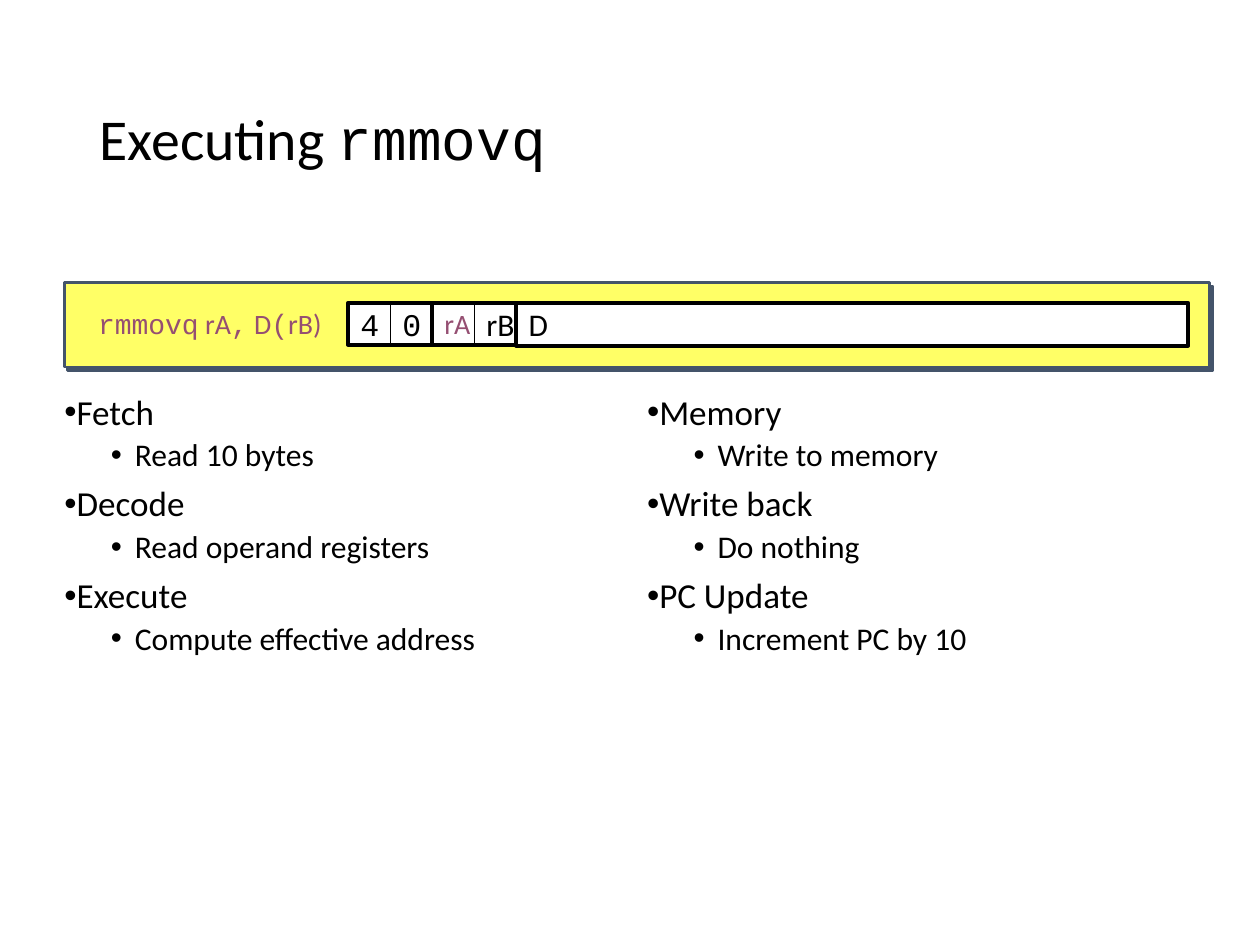
from lxml import etree
from pptx import Presentation
from pptx import util as u
from pptx.dml.color import RGBColor
from pptx.enum import shapes, text
from pptx.oxml import ns

COLORS = {"ink": "000000", "paper": "FFFFFF", "banner": "FFFF66",
          "slate": "44546A", "plum": "954F72"}
SANS, MONO = "Calibri", "Courier New"
CELL = 0.333
ROW_LEFT, ROW_TOP = 2.76, 2.4

STAGES_LEFT = [("Fetch", "Read 10 bytes"),
               ("Decode", "Read operand registers"),
               ("Execute", "Compute effective address")]
STAGES_RIGHT = [("Memory", "Write to memory"),
                ("Write back", "Do nothing"),
                ("PC Update", "Increment PC by 10")]


def rgb(name):
    return RGBColor.from_string(COLORS[name])


def inches(*lengths):
    return [u.Inches(length) for length in lengths]


def add_text(paragraph, wording, size=18, font=SANS, color="ink"):
    run = paragraph.add_run()
    run.text = wording
    run.font.size = u.Pt(size)
    run.font.name = font
    run.font.color.rgb = rgb(color)


def place(placeholder, *box):
    placeholder.left, placeholder.top, placeholder.width, placeholder.height = inches(*box)
    placeholder.text_frame.auto_size = text.MSO_AUTO_SIZE.NONE
    return placeholder.text_frame


def add_title(title):
    frame = place(title, 0.69, 0.4, 8.61, 1.45)
    frame.vertical_anchor = text.MSO_ANCHOR.MIDDLE
    heading = frame.paragraphs[0]
    heading.alignment = text.PP_ALIGN.LEFT
    heading.line_spacing = 0.9
    add_text(heading, "Executing ", size=33)
    add_text(heading, "rmmovq", size=33, font=MONO)


def add_bullet(item, wording, level):
    item.level = level
    item.line_spacing = 0.9
    item.space_before = u.Pt(3.8 if level else 7.5)
    margin, indent = inches(0.56, -0.19) if level else inches(0, 0)
    properties = item._p.get_or_add_pPr()
    properties.set("marL", str(margin))
    properties.set("indent", str(indent))
    etree.SubElement(properties, ns.qn("a:buFont"), typeface="Arial")
    etree.SubElement(properties, ns.qn("a:buChar"), char="•")
    add_text(item, wording, size=18 if level else 20)


def add_stages(body, left, stages):
    frame = place(body, left, 3.08, 4.45, 5.03)
    frame.vertical_anchor = text.MSO_ANCHOR.TOP
    lines = [(wording, level) for stage in stages for level, wording in enumerate(stage)]
    for number, (wording, level) in enumerate(lines):
        item = frame.add_paragraph() if number else frame.paragraphs[0]
        add_bullet(item, wording, level)


def add_box(group, box, fill=None, line="ink", weight=2.25):
    rectangle = group.shapes.add_shape(shapes.MSO_SHAPE.RECTANGLE, *inches(*box))
    rectangle.shadow.inherit = False
    if fill:
        rectangle.fill.solid()
        rectangle.fill.fore_color.rgb = rgb(fill)
    else:
        rectangle.fill.background()
    rectangle.line.color.rgb = rgb(line)
    rectangle.line.width = u.Pt(weight)
    return rectangle


def start_line(holder):
    frame = holder.text_frame
    frame.word_wrap = False
    frame.vertical_anchor = text.MSO_ANCHOR.MIDDLE
    frame.paragraphs[0].alignment = text.PP_ALIGN.LEFT
    return frame.paragraphs[0]


def add_field(group, box, wording, weight=0.5, **style):
    field = add_box(group, box, fill="paper", weight=weight)
    add_text(start_line(field), wording, **style)


def add_banner(group):
    banner = add_box(group, (0.51, 2.24, 9.08, 0.67), "banner", "slate", 1.5)
    effects = banner._element.spPr.find(ns.qn("a:effectLst"))
    shadow = etree.SubElement(effects, ns.qn("a:outerShdw"), dist=str(u.Pt(2.8)),
                              dir="2700000", algn="ctr", rotWithShape="0")
    etree.SubElement(shadow, ns.qn("a:srgbClr"), val=COLORS["slate"])


def add_syntax(group):
    label = group.shapes.add_textbox(*inches(0.68, ROW_TOP, 2.08, CELL))
    syntax = start_line(label)
    for wording, font in [("rmmovq", MONO), (" rA", SANS), (",", MONO),
                          (" D", SANS), ("(", MONO), ("rB)", SANS)]:
        add_text(syntax, wording, size=16, font=font, color="plum")


def add_encoding(group):
    nibbles = [("4", {"font": MONO}), ("0", {"font": MONO}),
               ("rA", {"size": 16, "color": "plum"}), ("rB", {})]
    for index, (wording, style) in enumerate(nibbles):
        left = ROW_LEFT + index * CELL
        add_field(group, (left, ROW_TOP, CELL, CELL), wording, **style)
        if index % 2:
            add_box(group, (left - CELL, ROW_TOP, 2 * CELL, CELL))
    add_field(group, (ROW_LEFT + 4 * CELL, ROW_TOP, 16 * CELL, 0.34), "D", weight=2.25)


def main():
    deck = Presentation()
    deck.slide_width, deck.slide_height = inches(9.99, 7.49)
    slide = deck.slides.add_slide(deck.slide_layouts[3])
    add_title(slide.shapes.title)
    add_stages(slide.placeholders[1], 0.41, STAGES_LEFT)
    add_stages(slide.placeholders[2], 5.03, STAGES_RIGHT)
    instruction = slide.shapes.add_group_shape()
    add_banner(instruction)
    add_syntax(instruction)
    add_encoding(instruction)
    deck.save("out.pptx")


if __name__ == "__main__":
    main()
